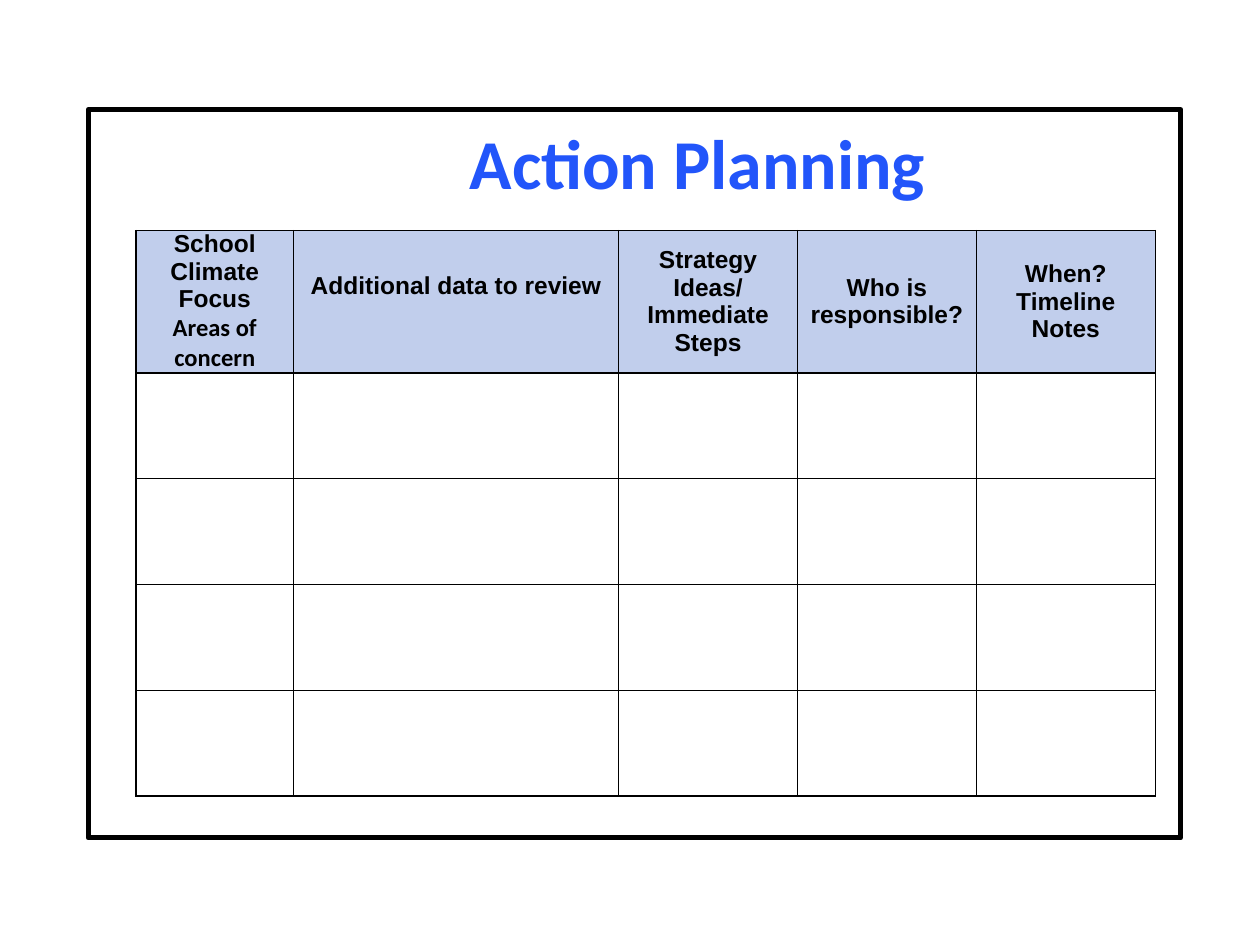
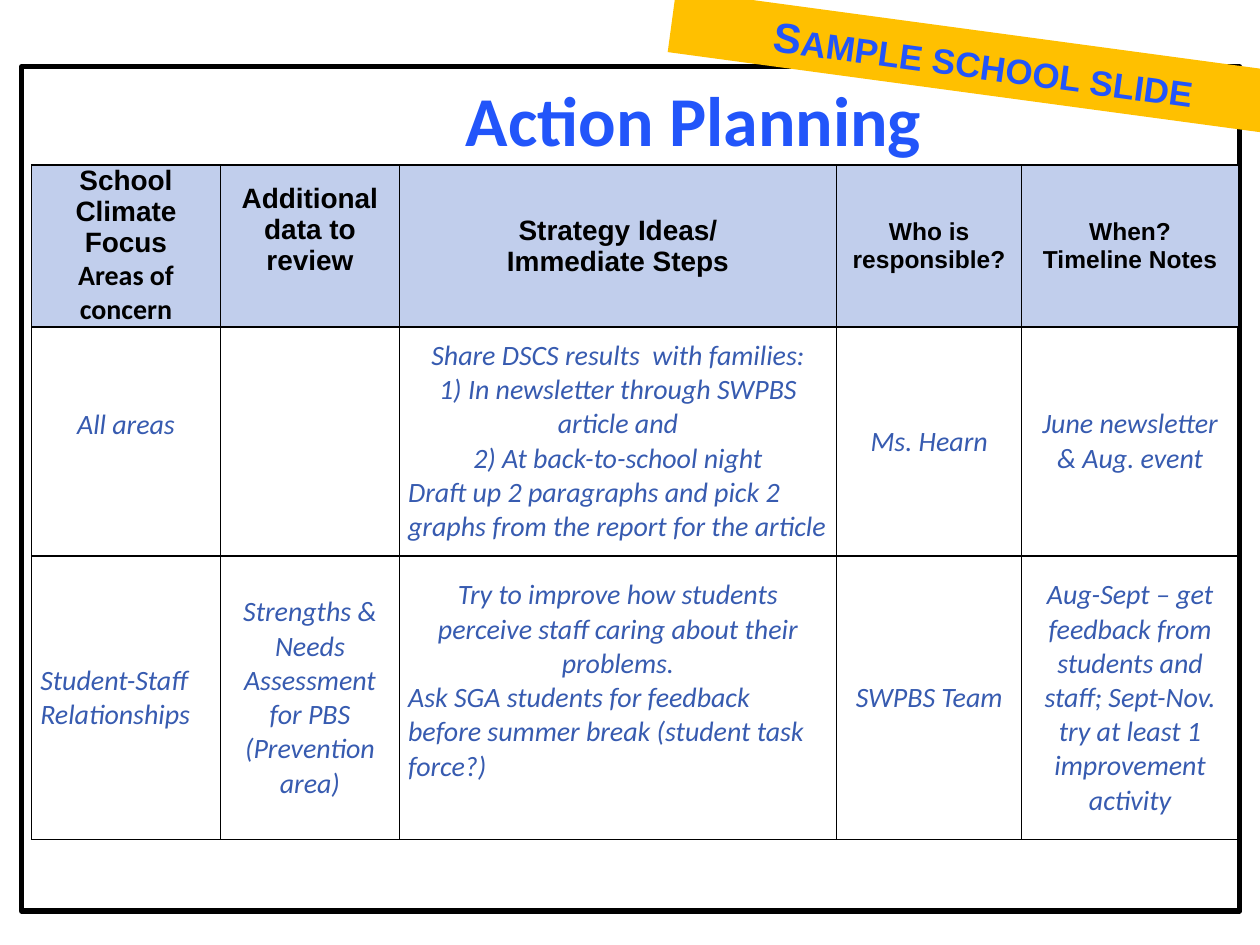
"""Build the two action planning slides: a blank form and a filled-in sample."""
from dataclasses import dataclass

from lxml.etree import SubElement
from pptx import Presentation
from pptx.dml.color import RGBColor
from pptx.enum.shapes import MSO_SHAPE
from pptx.enum.text import MSO_ANCHOR, MSO_AUTO_SIZE, PP_ALIGN
from pptx.oxml.ns import qn
from pptx.slide import Slide
from pptx.table import _Cell
from pptx.text.text import Font
from pptx.util import Inches, Pt


@dataclass(frozen=True)
class Theme:
    """Colours, fonts and type sizes of both slides."""
    title: RGBColor = RGBColor(0x22, 0x55, 0xFA)
    ink: RGBColor = RGBColor(0, 0, 0)
    heading_fill: RGBColor = RGBColor(0xC1, 0xCE, 0xEC)
    answer: RGBColor = RGBColor(0x37, 0x5B, 0xB0)
    ribbon: RGBColor = RGBColor(0xFF, 0xC0, 0x00)
    sans: str = "Arial"
    humanist: str = "Calibri"
    title_size: int = 40
    initial_size: int = 24
    ribbon_size: int = 20
    large: int = 16
    small: int = 14
    frame_width: int = 3
    rule_width: int = 1


THEME = Theme()


@dataclass(frozen=True)
class Box:
    """A place on the slide in inches."""
    left: float
    top: float
    width: float
    height: float

    def lengths(self) -> list[int]:
        """Return the four lengths in slide units."""
        return [Inches(v) for v in (self.left, self.top, self.width, self.height)]


@dataclass(frozen=True)
class Line:
    """One paragraph of a cell."""
    text: str
    align: PP_ALIGN = PP_ALIGN.CENTER
    font: str = THEME.humanist


@dataclass(frozen=True)
class Entry:
    """The paragraphs of a cell and the room kept free below them."""
    lines: tuple[Line, ...] = ()
    room_below: float = 0


@dataclass(frozen=True)
class Plan:
    """One action plan: its frame, grid and answers."""
    frame: Box
    grid: Box
    columns: tuple[float, ...]
    rows: tuple[float, ...]
    heading_sizes: tuple[int, ...]
    answers: tuple[tuple[Entry, ...], ...] = ()


def centred(*texts: str, font: str = THEME.humanist, room_below: float = 0) -> Entry:
    """Make an entry of centred paragraphs."""
    return Entry(tuple(Line(text, font=font) for text in texts), room_below)


def left(text: str) -> Line:
    """Make a left-aligned paragraph."""
    return Line(text, PP_ALIGN.LEFT)


HEADINGS = (
    Entry((Line("School Climate Focus", font=THEME.sans), Line("Areas of concern"))),
    centred("Additional data to review", font=THEME.sans, room_below=0.25),
    centred("Strategy Ideas/", "Immediate Steps", font=THEME.sans),
    centred("Who is responsible?", font=THEME.sans),
    centred("When?", "Timeline Notes", font=THEME.sans),
)

SHARING = Entry((
    *centred("Share DSCS results  with families:",
             "1) In newsletter through SWPBS article and",
             "2) At back-to-school night").lines,
    left("Draft up 2 paragraphs and pick 2 graphs from the report for the article"),
))
CARING = Entry((
    Line("Try to improve how students perceive staff caring about their problems."),
    left("Ask SGA students for feedback before summer break (student task force?)"),
), room_below=0.27)

BLANK_PLAN = Plan(
    frame=Box(0.7, 0.87, 8.67, 5.78),
    grid=Box(1.08, 1.83, 8.08, 4.46),
    columns=(1.25, 2.58, 1.42, 1.42, 1.42),
    rows=(1.08,) + (0.84,) * 4,
    heading_sizes=(THEME.small,) * 5,
)
SAMPLE_PLAN = Plan(
    frame=Box(0.17, 0.53, 9.67, 6.7),
    grid=Box(0.25, 1.31, 9.58, 5.28),
    columns=(1.5, 1.42, 3.47, 1.47, 1.72),
    rows=(1.21, 1.82, 2.25),
    heading_sizes=(THEME.large,) * 3 + (THEME.small,) * 2,
    answers=(
        (centred("All areas", room_below=0.27), Entry(), SHARING,
         centred("Ms. Hearn"), centred("June newsletter & Aug. event")),
        (Entry((left("Student-Staff Relationships"),)),
         centred("Strengths & Needs Assessment for PBS (Prevention area)"),
         CARING, centred("SWPBS Team"),
         centred("Aug-Sept – get feedback from students and staff; "
                 "Sept-Nov. try at least 1 improvement activity")),
    ),
)
RIBBON = Box(5.31, 0.25, 4.99, 0.5)


def style(font: Font, name: str, size: int, colour: RGBColor,
          bold: bool = True, italic: bool = False) -> None:
    """Format one font."""
    font.name, font.size, font.bold, font.italic = name, Pt(size), bold, italic
    font.color.rgb = colour


def rule_cell(cell: _Cell) -> None:
    """Draw a rule on each side of a cell."""
    properties = cell._tc.get_or_add_tcPr()
    for position, side in enumerate(("lnL", "lnR", "lnT", "lnB")):
        rule = SubElement(properties, qn(f"a:{side}"), w=str(Pt(THEME.rule_width)))
        ink = SubElement(rule, qn("a:solidFill"))
        SubElement(ink, qn("a:srgbClr"), val=str(THEME.ink))
        properties.insert(position, rule)


def fill_cell(cell: _Cell, entry: Entry, size: int, heading: bool) -> None:
    """Write an entry into a cell as a heading or an answer."""
    cell.margin_left = cell.margin_right = Inches(0.07)
    cell.margin_top = 0
    cell.margin_bottom = Inches(entry.room_below)
    cell.vertical_anchor = MSO_ANCHOR.MIDDLE
    if heading:
        cell.fill.solid()
        cell.fill.fore_color.rgb = THEME.heading_fill
    else:
        cell.fill.background()
    rule_cell(cell)
    cell.text_frame.text = "\n".join(line.text for line in entry.lines)
    colour = THEME.ink if heading else THEME.answer
    for line, paragraph in zip(entry.lines, cell.text_frame.paragraphs):
        paragraph.alignment = line.align
        for run in paragraph.runs:
            style(run.font, line.font, size, colour, bold=heading, italic=not heading)


def add_title(slide: Slide, frame: Box) -> None:
    """Place the title at the top of a framed page."""
    title = slide.shapes.title
    title.left, title.top, title.width, title.height = frame.lengths()
    title.line.color.rgb = THEME.ink
    title.line.width = Pt(THEME.frame_width)
    text = title.text_frame
    text.text = "Action Planning"
    text.auto_size = MSO_AUTO_SIZE.NONE
    text.vertical_anchor = MSO_ANCHOR.TOP
    text.margin_left = Inches(1.1)
    text.margin_top = Inches(0.08)
    text.paragraphs[0].alignment = PP_ALIGN.CENTER
    style(text.paragraphs[0].runs[0].font, THEME.humanist, THEME.title_size, THEME.title)


def add_grid(slide: Slide, plan: Plan) -> None:
    """Add the planning table with its headings and answers."""
    grid = slide.shapes.add_table(
        len(plan.rows), len(plan.columns), *plan.grid.lengths()).table
    grid.first_row = grid.horz_banding = False
    for column, width in zip(grid.columns, plan.columns):
        column.width = Inches(width)
    for row, height in zip(grid.rows, plan.rows):
        row.height = Inches(height)
    entries = (HEADINGS, *plan.answers)
    for r in range(len(plan.rows)):
        for c, heading_size in enumerate(plan.heading_sizes):
            entry = entries[r][c] if r < len(entries) else Entry()
            fill_cell(grid.cell(r, c), entry, THEME.large if r else heading_size, r == 0)


def add_ribbon(slide: Slide) -> None:
    """Add the slanted sample ribbon."""
    ribbon = slide.shapes.add_shape(MSO_SHAPE.RECTANGLE, *RIBBON.lengths())
    ribbon.rotation = 7.7
    ribbon.shadow.inherit = False
    ribbon.fill.solid()
    ribbon.fill.fore_color.rgb = THEME.ribbon
    ribbon.line.fill.background()
    text = ribbon.text_frame
    text.vertical_anchor = MSO_ANCHOR.TOP
    label = text.paragraphs[0]
    label.alignment = PP_ALIGN.CENTER
    for words, size in (("S", THEME.initial_size),
                        ("AMPLE SCHOOL SLIDE", THEME.ribbon_size)):
        run = label.add_run()
        run.text = words
        style(run.font, THEME.sans, size, THEME.title)


def main() -> None:
    """Build and save the presentation."""
    deck = Presentation()
    deck.slide_width, deck.slide_height = Inches(10), Inches(7.5)
    title_only = deck.slide_layouts[5]
    for plan in (BLANK_PLAN, SAMPLE_PLAN):
        slide = deck.slides.add_slide(title_only)
        add_title(slide, plan.frame)
        add_grid(slide, plan)
        if plan is SAMPLE_PLAN:
            add_ribbon(slide)
    deck.save("out.pptx")


if __name__ == "__main__":
    main()
